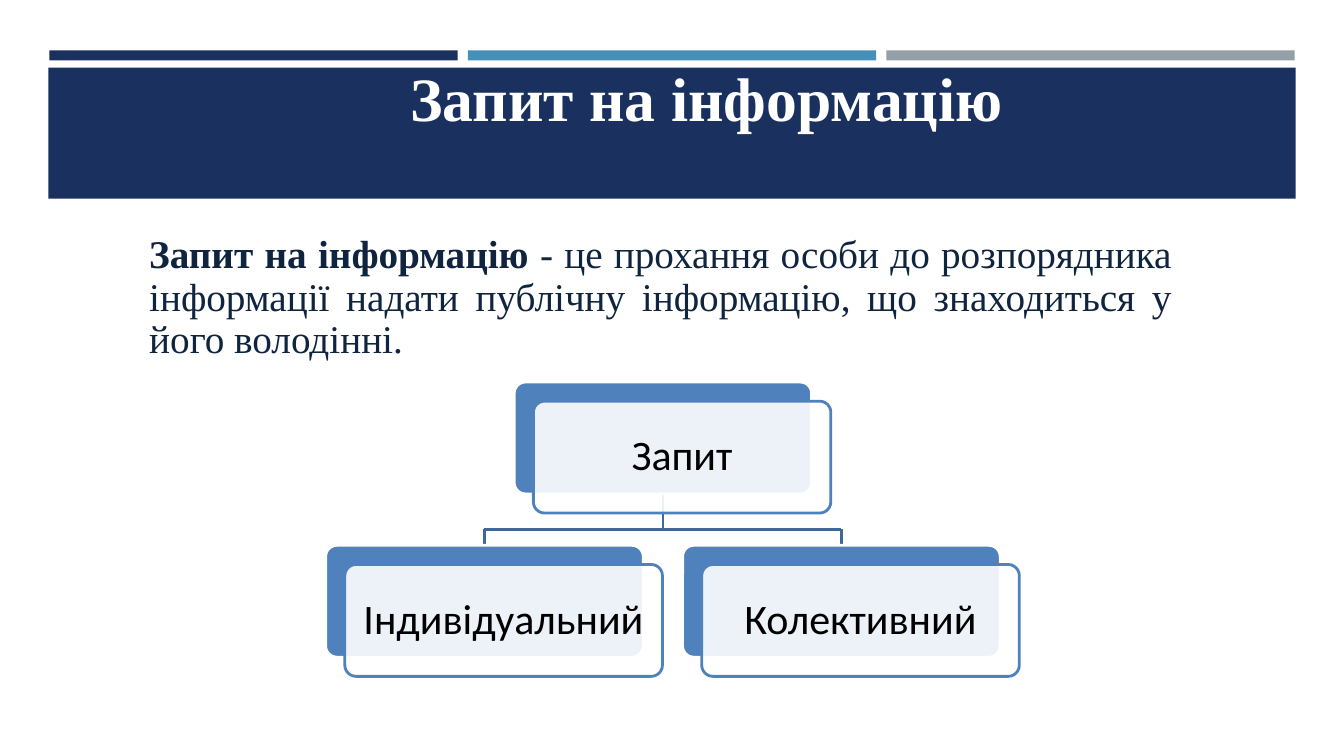
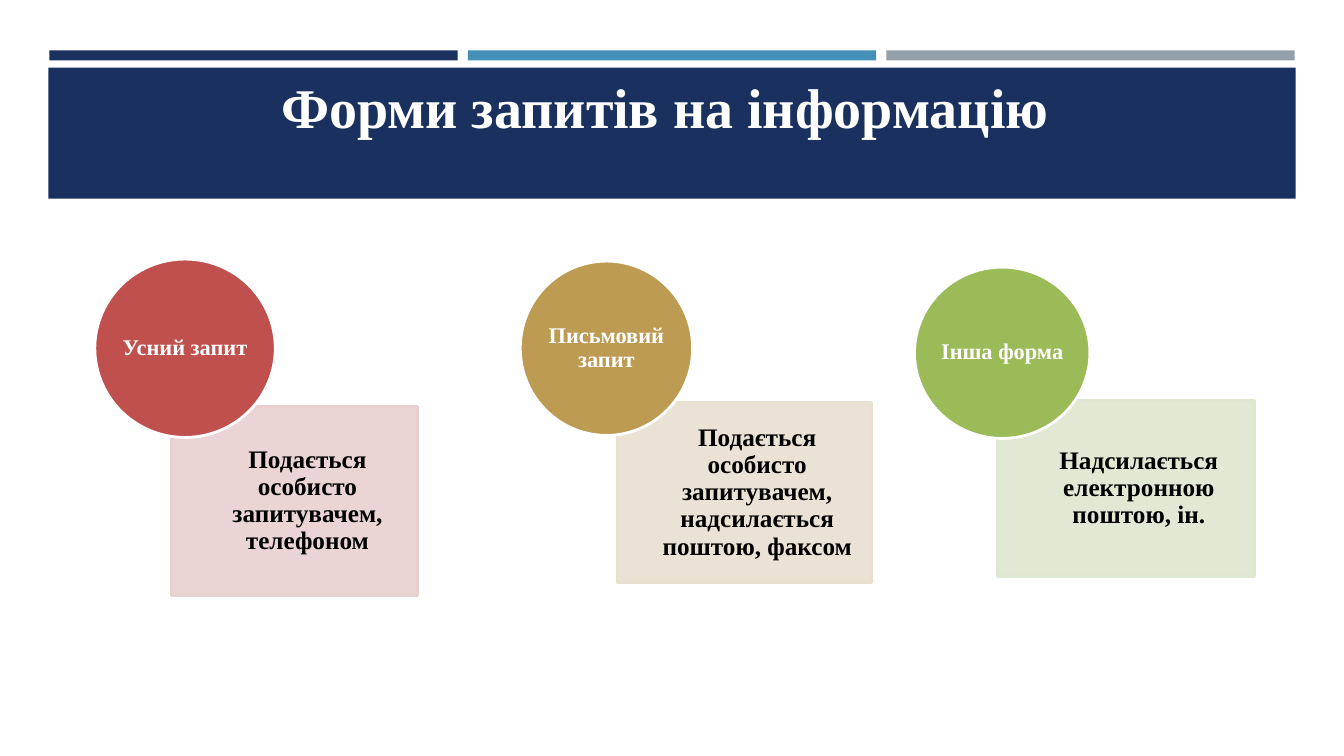
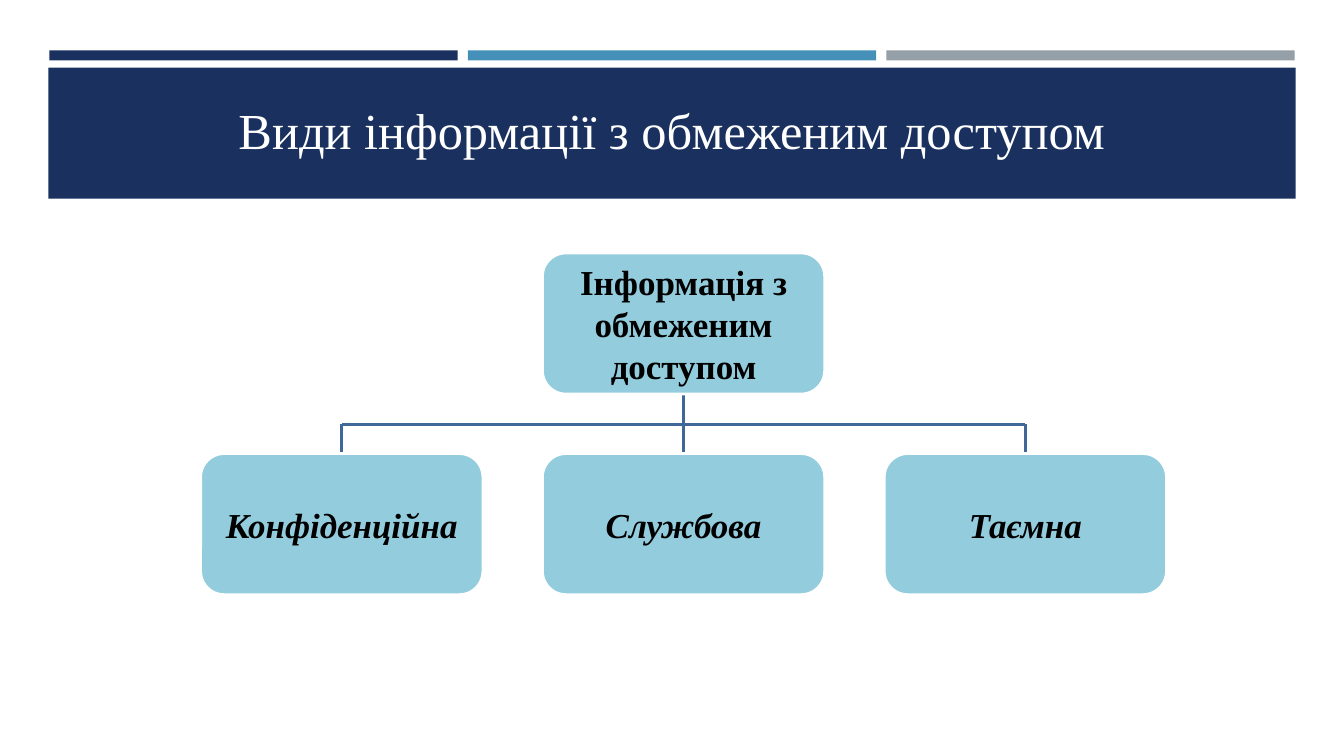
import pptx
import pptx.dml.color
import pptx.enum.shapes
import pptx.enum.text
import pptx.oxml.ns
import pptx.util
from lxml import etree

Inches = pptx.util.Inches
Pt = pptx.util.Pt
qn = pptx.oxml.ns.qn
MSO = pptx.enum.shapes.MSO_SHAPE
ALIGN = pptx.enum.text.PP_ALIGN
ANCHOR = pptx.enum.text.MSO_ANCHOR

COLORS = {
    "navy": "1A315F", "sky": "4590B8", "gray": "959FA7",
    "white": "FFFFFF", "black": "000000", "ink": "0F243E",
    "blue": "4F81BD", "link": "3F6797", "aqua": "93CDDD",
    "red": "C0504D", "pink": "E8D0D0",
    "gold": "BD9B53", "sand": "E8E1D1",
    "green": "9BBB59", "mint": "DEE7D1",
}
SERIF = "Times New Roman"
TITLE = {"name": SERIF, "size": Pt(44), "bold": True, "color": "white"}
BODY = {"name": SERIF, "size": Pt(28), "bold": False, "color": "ink"}
CARD = {"name": "Calibri", "size": Pt(30), "color": "black"}
CIRCLE = {"name": SERIF, "size": Pt(16), "bold": True, "color": "white"}
NOTE = {"name": SERIF, "size": Pt(18), "bold": True, "color": "black"}
NODE = {"name": SERIF, "size": Pt(25), "bold": True, "color": "black"}


def rgb(name):
    return pptx.dml.color.RGBColor.from_string(COLORS[name])


class Deck:
    def __init__(self):
        self.prs = pptx.Presentation()
        self.prs.slide_width = Inches(13.33)
        self.prs.slide_height = Inches(7.5)
        self.s = None

    def slide(self, title, box, layout=5, **fmt):
        first = self.s is None
        self.s = self.prs.slides.add_slide(self.prs.slide_layouts[layout])
        if first:
            self.master_bands()
        self.fill_placeholder(self.s.shapes.title, box, [(title, TITLE | fmt)], ALIGN.CENTER)

    def master_bands(self):
        """Draw the shared bands and move them behind everything on the master."""
        bands = [self.shape(MSO.RECTANGLE, (0.49 + 4.15 * i, 0.5, 4.05, 0.1), c)
                 for i, c in enumerate(("navy", "sky", "gray"))]
        bands.append(self.shape(MSO.RECTANGLE, (0.48, 0.67, 12.37, 1.3), "navy"))
        for i, sp in enumerate(bands):
            sp.element.xpath(".//p:cNvPr")[0].set("id", str(100 + i))
            self.prs.slide_master.shapes.element.insert(2 + i, sp.element)

    def text(self, tf, runs, align, insets=(0, 0, 0, 0), anchor=ANCHOR.MIDDLE, spacing=0.9):
        frame = dict(zip(("margin_left", "margin_top", "margin_right", "margin_bottom"),
                         map(Inches, insets)))
        frame |= {"word_wrap": True, "vertical_anchor": anchor,
                  "auto_size": pptx.enum.text.MSO_AUTO_SIZE.NONE}
        for key, value in frame.items():
            setattr(tf, key, value)
        p = tf.paragraphs[0]
        p.alignment, p.line_spacing = align, spacing
        for words, fmt in runs:
            r = p.add_run()
            r.text = words
            for key, value in fmt.items():
                if key == "color":
                    r.font.color.rgb = rgb(value)
                else:
                    setattr(r.font, key, value)
        return p

    def fill_placeholder(self, sp, box, runs, align):
        sp.left, sp.top, sp.width, sp.height = map(Inches, box)
        return self.text(sp.text_frame, runs, align, anchor=ANCHOR.TOP)

    def body(self, box, runs):
        p = self.fill_placeholder(self.s.placeholders[1], box, runs, ALIGN.JUSTIFY)
        p.space_before = Pt(10)
        pPr = p._p.get_or_add_pPr()
        pPr.set("marL", "0")
        pPr.set("indent", "0")
        etree.SubElement(pPr, qn("a:buNone"))

    def shape(self, kind, box, fill, line=None, alpha=None, radius=None):
        sp = self.s.shapes.add_shape(kind, *map(Inches, box))
        sp.shadow.inherit = False
        sp.fill.solid()
        sp.fill.fore_color.rgb = rgb(fill)
        if line:
            sp.line.color.rgb = rgb(line)
            sp.line.width = Pt(2)
        else:
            sp.line.fill.background()
        if alpha:
            clr = sp.element.xpath("./p:spPr/a:solidFill/a:srgbClr")[0]
            etree.SubElement(clr, qn("a:alpha")).set("val", str(alpha * 1000))
        if radius:
            sp.adjustments[0] = radius
        return sp

    def card(self, box, words):
        """White card offset over a blue one; returns the blue one."""
        x, y, w, h = box
        back = self.shape(MSO.ROUNDED_RECTANGLE, box, "blue", "white", radius=0.1)
        front = self.shape(MSO.ROUNDED_RECTANGLE, (x + 0.19, y + 0.19, w, h),
                           "white", "blue", alpha=90, radius=0.1)
        self.text(front.text_frame, [(words, CARD)], ALIGN.CENTER, (0.05, 0.12, 0.05, 0.12))
        return back

    def node(self, x, y, words, italic=False):
        sp = self.shape(MSO.ROUNDED_RECTANGLE, (x, y, 2.8, 1.4), "aqua", "white")
        self.text(sp.text_frame, [(words, NODE | {"italic": italic})], ALIGN.CENTER,
                  (0.05,) * 4, spacing=1.0)
        return sp

    def circle_note(self, circle, note, colors, label, words):
        sp = self.shape(MSO.RECTANGLE, note, colors[1], colors[1], alpha=90)
        self.text(sp.text_frame, [(words, NOTE)], ALIGN.CENTER, (0.4, 0.14, 0.14, 0.14))
        sp = self.shape(MSO.OVAL, circle, colors[0], "white")
        self.text(sp.text_frame, [(label, CIRCLE)], ALIGN.CENTER)

    def line(self, x1, y1, x2, y2):
        cx = self.s.shapes.add_connector(pptx.enum.shapes.MSO_CONNECTOR.STRAIGHT, x1, y1, x2, y2)
        cx.line.color.rgb = rgb("link")
        cx.line.width = Pt(2)
        etree.SubElement(cx.element.spPr, qn("a:effectLst"))
        self.s.shapes.element.insert(2, cx.element)
        return cx

    def tree(self, parent, children, bus):
        """Join a parent to its children through a horizontal line at height bus."""
        bus = Inches(bus)
        mid = parent.left + parent.width // 2
        trunk = self.line(mid, parent.top + parent.height, mid, bus)
        trunk.begin_connect(parent, 2)
        centers = [sp.left + sp.width // 2 for sp in children]
        self.line(centers[0], bus, centers[-1], bus)
        for sp, x in zip(children, centers):
            self.line(x, bus, x, sp.top).end_connect(sp, 0)


def main():
    d = Deck()

    d.slide("Запит на інформацію", (1.79, 0.68, 10.44, 1.4), layout=1)
    d.body((1.48, 2.33, 10.14, 4.72), [
        ("Запит на інформацію ", BODY | {"bold": True}),
        ("- це прохання особи до розпорядника інформації надати публічну "
         "інформацію, що знаходиться у його володінні.", BODY)])
    request = d.card((5.1, 3.79, 2.95, 1.11), "Запит")
    kinds = [d.card((x, 5.41, 3.15, 1.11), words)
             for x, words in ((3.23, "Індивідуальний"), (6.77, "Колективний"))]
    d.tree(request, kinds, 5.25)

    d.slide("Форми запитів на інформацію", (0.65, 0.79, 11.89, 1.07), size=Pt(40))
    for form in (
        ((0.94, 2.57, 1.79, 1.77), (1.7, 4.03, 2.44, 1.88), ("red", "pink"),
         "Усний запит", "Подається особисто запитувачем, телефоном"),
        ((5.16, 2.59, 1.71, 1.73), (6.12, 3.99, 2.52, 1.79), ("gold", "sand"),
         "Письмовий запит", "Подається особисто запитувачем, надсилається поштою, факсом"),
        ((9.07, 2.65, 1.74, 1.7), (9.89, 3.97, 2.55, 1.75), ("green", "mint"),
         "Інша форма", "Надсилається електронною поштою, ін."),
    ):
        d.circle_note(*form)

    d.slide("Види інформації з обмеженим доступом", (0.72, 1.05, 11.89, 0.58),
            size=Pt(36), bold=False)
    root = d.node(5.38, 2.51, "Інформація з обмеженим доступом")
    leaves = [d.node(1.99 + 3.39 * i, 4.5, words, italic=True)
              for i, words in enumerate(("Конфіденційна", "Службова", "Таємна"))]
    d.tree(root, leaves, 4.21)

    d.prs.save("out.pptx")


if __name__ == "__main__":
    main()
